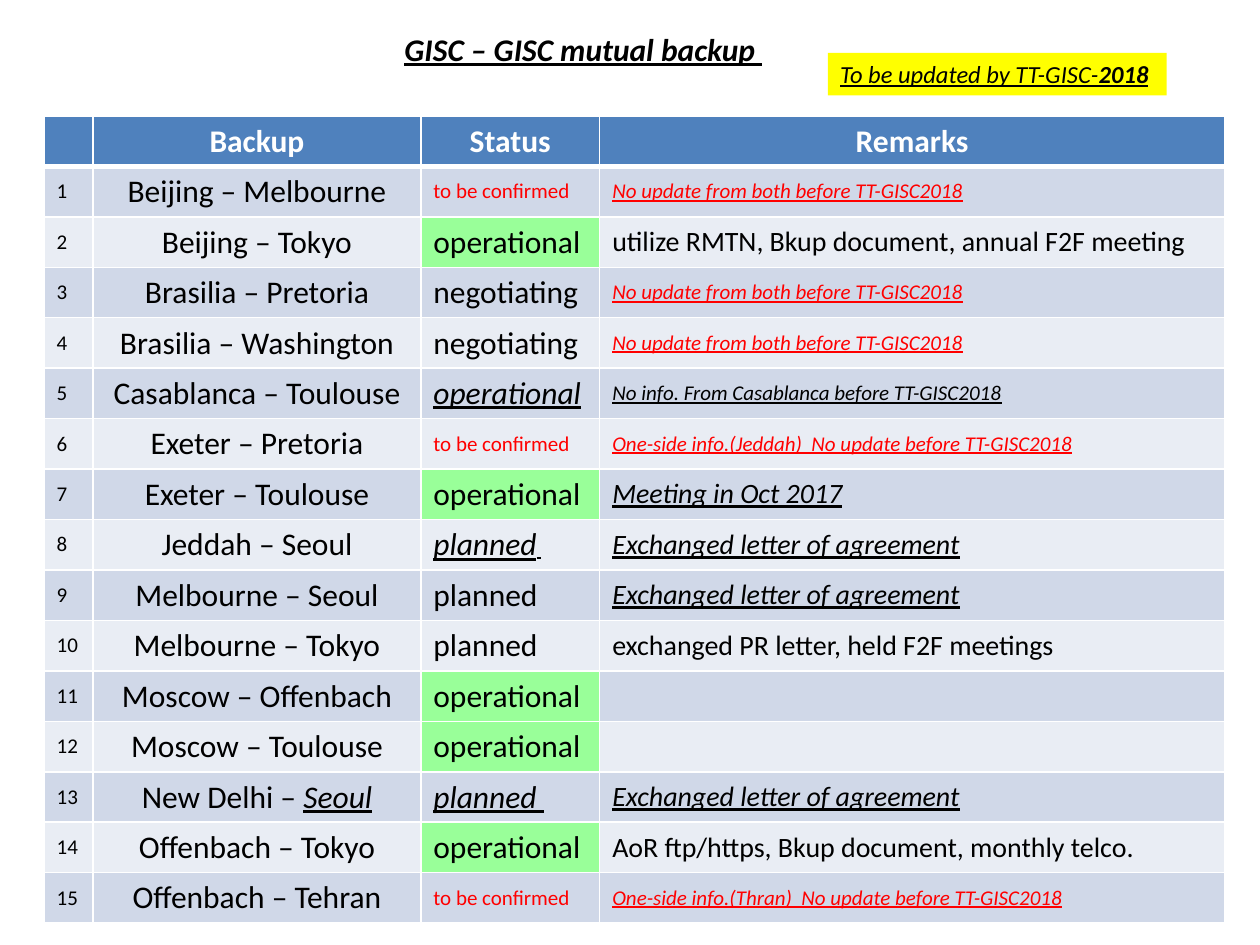
from dataclasses import dataclass
from typing import NamedTuple

from lxml.etree import SubElement
from pptx import Presentation
from pptx.dml.color import RGBColor
from pptx.enum.shapes import MSO_SHAPE
from pptx.enum.text import MSO_ANCHOR, MSO_AUTO_SIZE, PP_ALIGN
from pptx.oxml.ns import qn
from pptx.util import Inches, Pt

BLACK, WHITE, RED = "000000", "FFFFFF", "FF0000"
HEADER_BLUE, GREEN, YELLOW = "4F81BD", "99FF99", "FFFF00"
BANDS = ("D0D8E8", "E9EDF4")
WIDTH, HEIGHT = Inches(10), Inches(7.5)
COLUMN_WIDTHS = (0.39, 2.6, 1.42, 4.96)
ROW_HEIGHT = 0.4


class Piece(NamedTuple):
    text: str
    size: float = 18
    color: str = BLACK
    bold: bool = False
    marked: bool = False


@dataclass
class Backup:
    pair: tuple[Piece, ...]
    status: tuple[Piece, ...]
    remark: tuple[Piece, ...] = ()
    highlighted: bool = False


def color_of(value: str) -> RGBColor:
    return RGBColor.from_string(value)


def write(frame, *pieces: Piece, align=PP_ALIGN.LEFT, anchor=MSO_ANCHOR.MIDDLE) -> None:
    frame.vertical_anchor = anchor
    paragraph = frame.paragraphs[0]
    paragraph.alignment = align
    for piece in pieces:
        run = paragraph.add_run()
        run.text = piece.text
        font = run.font
        font.name, font.size = "Calibri", Pt(piece.size)
        font.bold, font.italic, font.underline = piece.bold, piece.marked, piece.marked
        font.color.rgb = color_of(piece.color)


def place(shape, left: float, top: float, width: float, height: float) -> None:
    shape.left, shape.top = int(WIDTH * left), int(HEIGHT * top)
    shape.width, shape.height = int(WIDTH * width), int(HEIGHT * height)


def fit_to_text(frame) -> None:
    frame.word_wrap = False
    frame.auto_size = MSO_AUTO_SIZE.SHAPE_TO_FIT_TEXT


def style_cell(cell, fill: str, top: float = 1, bottom: float = 1) -> None:
    properties = cell._tc.get_or_add_tcPr()
    for side, width in zip("LRTB", (1, 1, top, bottom)):
        line = SubElement(properties, qn(f"a:ln{side}"), w=str(Pt(width)))
        line_fill = SubElement(line, qn("a:solidFill"))
        SubElement(line_fill, qn("a:srgbClr"), val=WHITE)
    cell.fill.solid()
    cell.fill.fore_color.rgb = color_of(fill)


def plain(text: str, size: float = 18) -> tuple[Piece, ...]:
    return (Piece(text, size),)


def marked(text: str, size: float = 16, color: str = BLACK) -> tuple[Piece, ...]:
    return (Piece(text, size, color, marked=True),)


OPERATIONAL, NEGOTIATING, PLANNED = map(plain, ("operational", "negotiating", "planned"))
UNCONFIRMED = (Piece("to be confirmed", 12, RED),)
NO_UPDATE = marked("No update from both before TT-GISC2018", 12, RED)
LETTER = marked("Exchanged letter of agreement")

BACKUPS = (
    Backup(plain("Beijing – Melbourne"), UNCONFIRMED, NO_UPDATE),
    Backup(plain("Beijing – Tokyo"), OPERATIONAL,
           plain("utilize RMTN, Bkup document, annual F2F meeting", 16), True),
    Backup(plain("Brasilia – Pretoria"), NEGOTIATING, NO_UPDATE),
    Backup(plain("Brasilia – Washington"), NEGOTIATING, NO_UPDATE),
    Backup(plain("Casablanca – Toulouse"), marked("operational", 18),
           marked("No info. From Casablanca before TT-GISC2018", 12)),
    Backup(plain("Exeter – Pretoria"), UNCONFIRMED,
           marked("One-side info.(Jeddah)  No update before TT-GISC2018", 12, RED)),
    Backup(plain("Exeter – Toulouse"), OPERATIONAL, marked("Meeting in Oct 2017"), True),
    Backup(plain("Jeddah – Seoul"), marked("planned", 18) + marked(" ", 12), LETTER),
    Backup(plain("Melbourne – Seoul"), PLANNED, LETTER),
    Backup(plain("Melbourne – Tokyo"), PLANNED,
           plain("exchanged PR letter, held F2F meetings ", 16)),
    Backup(plain("Moscow – Offenbach"), OPERATIONAL, highlighted=True),
    Backup(plain("Moscow – Toulouse"), OPERATIONAL, highlighted=True),
    Backup(plain("New Delhi – ") + marked("Seoul", 18), marked("planned ", 18), LETTER),
    Backup(plain("Offenbach – Tokyo"), OPERATIONAL,
           plain("AoR ftp/https, Bkup document, monthly telco.", 16), True),
    Backup(plain("Offenbach – Tehran"), UNCONFIRMED,
           marked("One-side info.(Thran)  No update before TT-GISC2018", 12, RED)),
)


def add_backup_table(slide) -> None:
    row_count = len(BACKUPS) + 1
    frame = slide.shapes.add_table(
        row_count, len(COLUMN_WIDTHS), Inches(0.35), Inches(0.92),
        Inches(sum(COLUMN_WIDTHS)), Inches(ROW_HEIGHT * row_count))
    table = frame.table
    for column, width in zip(table.columns, COLUMN_WIDTHS):
        column.width = Inches(width)
    for row in table.rows:
        row.height = Inches(ROW_HEIGHT)

    for index, heading in enumerate(("", "Backup", "Status", "Remarks")):
        cell = table.cell(0, index)
        style_cell(cell, HEADER_BLUE, bottom=3)
        if heading:
            write(cell.text_frame, Piece(heading, color=WHITE, bold=True),
                  align=PP_ALIGN.CENTER, anchor=MSO_ANCHOR.TOP)

    for number, backup in enumerate(BACKUPS, start=1):
        band = BANDS[(number - 1) % 2]
        contents = (plain(str(number), 12), backup.pair, backup.status, backup.remark)
        for index, pieces in enumerate(contents):
            cell = table.cell(number, index)
            fill = GREEN if index == 2 and backup.highlighted else band
            style_cell(cell, fill, top=3 if number == 1 else 1)
            cell.vertical_anchor = MSO_ANCHOR.MIDDLE
            write(cell.text_frame, *pieces,
                  align=PP_ALIGN.CENTER if index == 1 else PP_ALIGN.LEFT)


def add_title(slide) -> None:
    title = slide.shapes.title
    place(title, 0.311, 0.025, 0.308, 0.053)
    fit_to_text(title.text_frame)
    write(title.text_frame, Piece("GISC – GISC mutual backup ", bold=True, marked=True),
          anchor=MSO_ANCHOR.TOP)


def add_update_note(slide) -> None:
    note = slide.shapes.add_shape(MSO_SHAPE.RECTANGLE, 0, 0, 0, 0)
    place(note, 0.657, 0.056, 0.269, 0.045)
    note.shadow.inherit = False
    note.fill.solid()
    note.fill.fore_color.rgb = color_of(YELLOW)
    note.line.fill.background()
    fit_to_text(note.text_frame)
    write(note.text_frame, Piece("To be updated by TT-GISC-", 14, marked=True),
          Piece("2018", 14, bold=True, marked=True), anchor=MSO_ANCHOR.TOP)


def main() -> None:
    presentation = Presentation()
    presentation.slide_width, presentation.slide_height = WIDTH, HEIGHT
    slide = presentation.slides.add_slide(presentation.slide_layouts[5])
    add_backup_table(slide)
    add_title(slide)
    add_update_note(slide)
    presentation.save("out.pptx")


if __name__ == "__main__":
    main()
